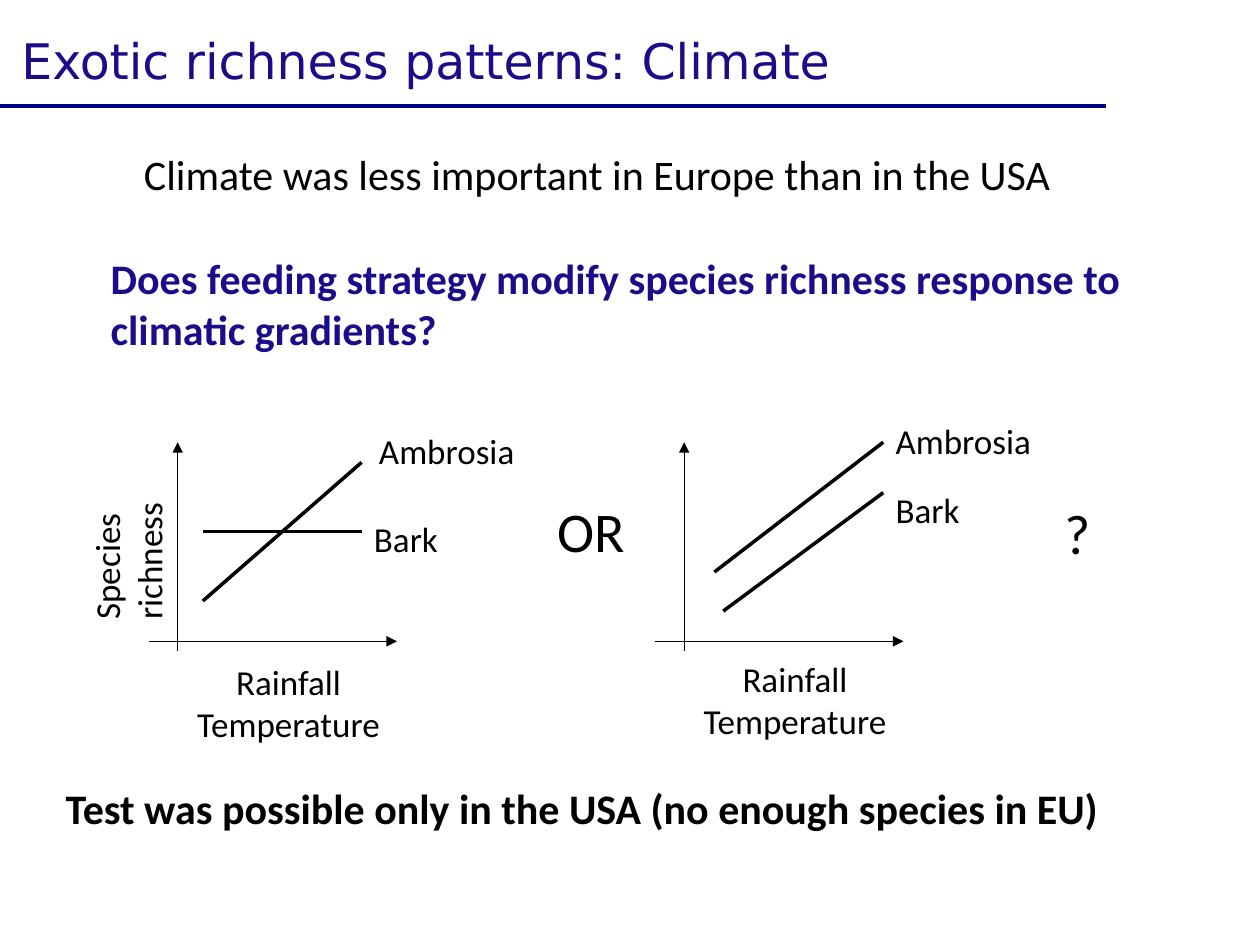
from pptx import Presentation
from pptx.dml.color import RGBColor
from pptx.enum.shapes import MSO_CONNECTOR
from pptx.enum.text import MSO_ANCHOR, PP_ALIGN
from pptx.oxml.ns import qn
from pptx.util import Inches, Pt
from lxml import etree

COLORS = {"title": "1B0C8A", "rule": "000080", "ink": "000000"}

deck = Presentation()
deck.slide_width, deck.slide_height = Inches(10), Inches(7.5)
slide = deck.slides.add_slide(deck.slide_layouts[5])


def add_text(text, left, top, width, height, size=20, color="ink",
             bold=False, align=PP_ALIGN.LEFT):
    box = slide.shapes.add_textbox(
        Inches(left), Inches(top), Inches(width), Inches(height))
    frame = box.text_frame
    frame.word_wrap = True
    frame.vertical_anchor = MSO_ANCHOR.MIDDLE
    frame.text = text
    for para in frame.paragraphs:
        para.alignment = align
        para.font.name = "Calibri"
        para.font.size = Pt(size)
        para.font.bold = bold
        para.font.color.rgb = RGBColor.from_string(COLORS[color])
    return box


def add_line(x1, y1, x2, y2, width=2, color="ink", arrow=False):
    line = slide.shapes.add_connector(
        MSO_CONNECTOR.STRAIGHT, Inches(x1), Inches(y1), Inches(x2), Inches(y2))
    line.line.width = Pt(width)
    line.line.color.rgb = RGBColor.from_string(COLORS[color])
    props = line._element.spPr
    if arrow:
        etree.SubElement(props.find(qn("a:ln")), qn("a:tailEnd"), type="triangle")
    etree.SubElement(props, qn("a:effectLst"))


# Title and the rule under it
title = slide.shapes.title
title.left, title.top = Inches(0.07), Inches(0.19)
title.width, title.height = Inches(9.82), Inches(0.57)
title.text_frame.text = "Exotic richness patterns: Climate"
title.text_frame.vertical_anchor = MSO_ANCHOR.TOP
head = title.text_frame.paragraphs[0]
head.alignment = PP_ALIGN.LEFT
head.font.name = "DejaVu Sans"
head.font.size = Pt(28)
head.font.color.rgb = RGBColor.from_string(COLORS["title"])
add_line(0, 0.84, 8.78, 0.84, color="rule")

# Statements
add_text("Climate was less important in Europe than in the USA",
         0.39, 1.13, 8.7, 0.5, size=24, align=PP_ALIGN.CENTER)
add_text("Does feeding strategy modify species richness response to "
         "climatic gradients?", 0.78, 1.95, 8.7, 0.91, size=24,
         color="title", bold=True)
add_text("Test was possible only in the USA (no enough species in EU)",
         0.27, 6.16, 8.7, 0.5, size=24, bold=True, align=PP_ALIGN.CENTER)

# Axes of both graphs, with their labels
for left, top in ((1.18, 5.19), (5.2, 5.17)):
    add_line(left + 0.23, 5.17, left + 0.23, 3.51, width=0.75, arrow=True)
    add_line(left, 5.09, left + 1.97, 5.09, width=0.75, arrow=True)
    add_text("Rainfall\nTemperature", left + 0.01, top, 2.2, 0.77,
             align=PP_ALIGN.CENTER)
side = add_text("Species richness", 0.26, 3.88, 1.5, 0.77)
side.rotation = 270

# Trend lines: crossing on the left, parallel on the right
for ends in ((1.61, 4.77, 2.87, 3.67), (1.61, 4.22, 2.87, 4.22),
             (5.67, 4.54, 7.01, 3.51), (5.74, 4.85, 7.01, 3.91)):
    add_line(*ends)

# Trend line labels
for name, left, top in (("Ambrosia", 2.91, 3.36), ("Bark", 2.87, 4.06),
                        ("Ambrosia", 7.01, 3.28), ("Bark", 7.01, 3.83)):
    add_text(name, left, top, 1.5, 0.43)

# Choice between the graphs
for word, left, top in (("OR", 4.14, 3.89), ("?", 8, 3.91)):
    add_text(word, left, top, 1.1, 0.63, size=32, align=PP_ALIGN.CENTER)

deck.save("out.pptx")
